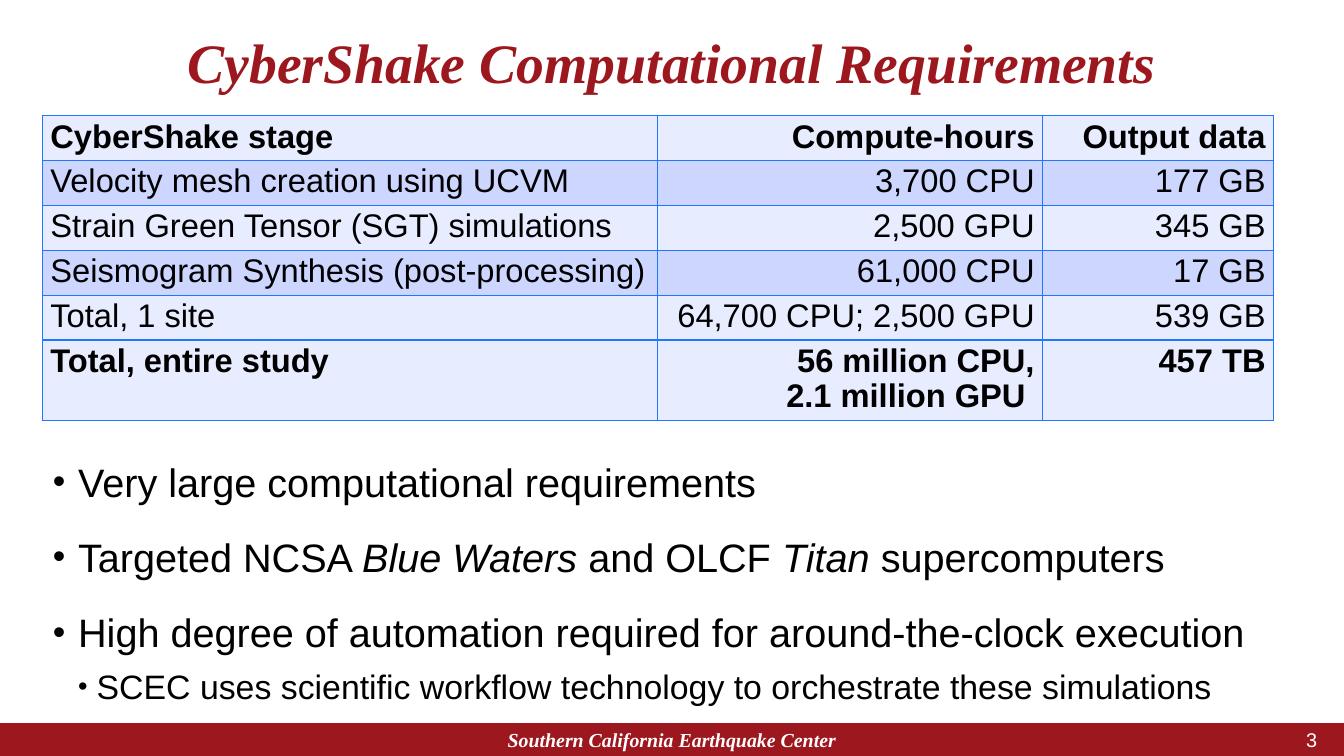
from lxml.etree import SubElement as Sub
from pptx import Presentation
from pptx.dml.color import RGBColor as RGB
from pptx.enum.shapes import MSO_SHAPE as Shape
from pptx.enum.text import MSO_ANCHOR as Anchor, MSO_AUTO_SIZE as Fit, PP_ALIGN as Align
from pptx.oxml.ns import qn
from pptx.util import Pt

COLORS = {"red": "9D171E", "white": "FFFFFF", "black": "000000",
          "line": "2076FF", "pale": "E8ECFF", "band": "CDD6FF"}
SANS, SERIF = "Arial", "Times New Roman"

STAGES = [
    ("CyberShake stage", "Compute-hours", "Output data"),
    ("Velocity mesh creation using UCVM", "3,700 CPU", "177 GB"),
    ("Strain Green Tensor (SGT) simulations", "2,500 GPU", "345 GB"),
    ("Seismogram Synthesis (post-processing)", "61,000 CPU", "17 GB"),
    ("Total, 1 site", "64,700 CPU; 2,500 GPU", "539 GB"),
    ("Total, entire study", "56 million CPU,\n2.1 million GPU ", "457 TB"),
]
# Each point: level, then runs of (text, italic)
POINTS = [
    (0, [("Very large computational requirements", False)]),
    (0, [("Targeted NCSA ", False), ("Blue Waters ", True), ("and OLCF ", False),
         ("Titan", True), (" supercomputers", False)]),
    (0, [("High degree of automation required for around-the-clock execution", False)]),
    (1, [("SCEC uses scientific workflow technology to orchestrate these simulations",
          False)]),
]
LEVELS = [
    {"size": 34, "left": 22.3, "hang": 21.6, "before": 21.6, "dot": 90},
    {"size": 29, "left": 38.2, "hang": 15.8, "before": 7.2, "dot": 80},
]


def color(name):
    return RGB.from_string(COLORS[name])


def style(run, size, face, tint, bold=False, italic=False):
    look = {"size": Pt(size), "name": face, "bold": bold, "italic": italic}
    for key, value in look.items():
        setattr(run.font, key, value)
    run.font.color.rgb = color(tint)


def place(shape, box):
    for key, value in zip(("left", "top", "width", "height"), box):
        setattr(shape, key, Pt(value))


def frame(shape, anchor):
    text = shape.text_frame
    look = {"word_wrap": True, "auto_size": Fit.NONE, "vertical_anchor": anchor,
            "margin_left": Pt(8.64), "margin_right": Pt(8.64),
            "margin_top": Pt(4.32), "margin_bottom": Pt(4.32)}
    for key, value in look.items():
        setattr(text, key, value)
    return text


def add_title(slide, box):
    title = slide.shapes.title
    place(title, box)
    para = frame(title, Anchor.MIDDLE).paragraphs[0]
    para.text = "CyberShake Computational Requirements"
    para.alignment, para.line_spacing = Align.CENTER, 0.9
    style(para.runs[0], 47.7, SERIF, "red", True, True)


def add_edges(cell, top, bottom):
    props = cell._tc.get_or_add_tcPr()
    for side, width in (("L", 1), ("R", 1), ("T", top), ("B", bottom)):
        edge = Sub(props, qn("a:ln" + side), w=str(Pt(width)))
        fill = Sub(edge, qn("a:solidFill"))
        Sub(fill, qn("a:srgbClr"), val=COLORS["line"])


def add_stages(slide, box):
    last = len(STAGES) - 1
    table = slide.shapes.add_table(len(STAGES), 3, *map(Pt, box)).table
    table.first_row = table.horz_banding = False
    for col, share in zip(table.columns, (8, 5, 3)):
        col.width = Pt(box[2] * share / 16)
    for i, words in enumerate(STAGES):
        table.rows[i].height = Pt(69.4 if i == last else 38.4)
        for j, word in enumerate(words):
            cell = table.cell(i, j)
            add_edges(cell, 2 if i == last else 1, 2 if i == last - 1 else 1)
            cell.fill.solid()
            cell.fill.fore_color.rgb = color("band" if i in (1, 3) else "pale")
            para = cell.text_frame.paragraphs[0]
            para.text = word
            para.alignment = Align.RIGHT if j else Align.LEFT
            para.line_spacing = 0.96
            for run in para.runs:
                style(run, 28, SANS, "black", i in (0, last))


def add_bullet(para, look):
    props = para._p.get_or_add_pPr()
    props.set("marL", str(Pt(look["left"])))
    props.set("indent", str(-Pt(look["hang"])))
    tint = Sub(props, qn("a:buClr"))
    Sub(tint, qn("a:srgbClr"), val=COLORS["black"])
    Sub(props, qn("a:buSzPct"), val=str(look["dot"] * 1000))
    Sub(props, qn("a:buFont"), typeface=SANS)
    Sub(props, qn("a:buChar"), char="•")


def add_points(slide, box):
    body = slide.placeholders[1]
    place(body, box)
    text = frame(body, Anchor.TOP)
    for i, (level, runs) in enumerate(POINTS):
        para = text.add_paragraph() if i else text.paragraphs[0]
        look = LEVELS[level]
        add_bullet(para, look)
        para.level, para.line_spacing = level, 1.05
        para.space_before = Pt(look["before"] if i else 0)
        para.space_after = Pt(0)
        for words, italic in runs:
            run = para.add_run()
            run.text = words
            style(run, look["size"], SANS, "black", italic=italic)


def add_footer(slide, box):
    left, top, width, height = box
    bar = slide.shapes.add_shape(Shape.RECTANGLE, *map(Pt, box))
    bar.shadow.inherit = False
    bar.fill.solid()
    bar.fill.fore_color.rgb = color("red")
    bar.line.fill.background()
    labels = [
        ("Southern California Earthquake Center", 381.6, 388.8, Align.CENTER, SERIF, True),
        ("3", 1029.6, 108, Align.RIGHT, SANS, False),
    ]
    for words, x, wide, align, face, strong in labels:
        label = slide.shapes.add_textbox(Pt(left + x), Pt(top), Pt(wide), Pt(height))
        para = frame(label, Anchor.MIDDLE).paragraphs[0]
        para.text, para.alignment = words, align
        style(para.runs[0], 17, face, "white", strong, strong)


def main():
    deck = Presentation()
    deck.slide_width, deck.slide_height = Pt(1152), Pt(648)
    slide = deck.slides.add_slide(deck.slide_layouts[1])
    add_title(slide, (28.8, 25.9, 1094.4, 60.5))
    add_stages(slide, (36, 99.4, 1056, 261.4))
    add_points(slide, (36, 385.9, 1057, 226.1))
    add_footer(slide, (0, 619.9, 1152, 28.1))
    deck.save("out.pptx")


if __name__ == "__main__":
    main()
